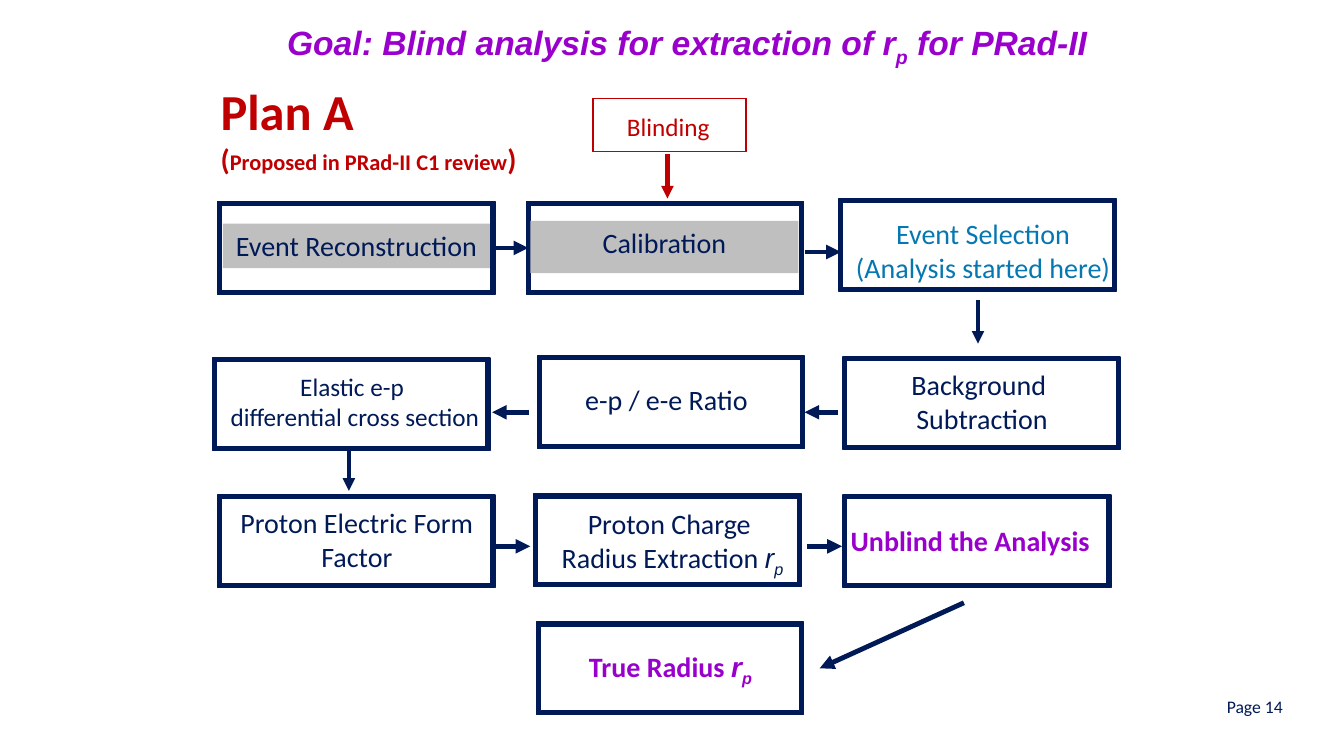
from pptx import Presentation
from pptx.dml.color import RGBColor
from pptx.enum.shapes import MSO_CONNECTOR as Connector, MSO_SHAPE as Shape
from pptx.enum.text import MSO_ANCHOR as Anchor, MSO_AUTO_SIZE as AutoSize, PP_ALIGN as Align
from pptx.oxml.ns import qn
from pptx.util import Inches, Pt
from lxml.etree import SubElement

NAVY = RGBColor(0x00, 0x1A, 0x57)
RED = RGBColor(0xC0, 0x00, 0x00)
PURPLE = RGBColor(0x99, 0x00, 0xCC)
BLUE = RGBColor(0x05, 0x77, 0xB1)
GREY = RGBColor(0xBF, 0xBF, 0xBF)

ITALIC, SUBSCRIPT = "italic", "subscript"
RADIUS = [("r", ITALIC), ("p", SUBSCRIPT)]
TITLE = ["Goal: Blind analysis for extraction of r", ("p", SUBSCRIPT), " for PRad-II"]
PLAN = [[("Plan A", 36)], [("(", 21), ("Proposed in PRad-II C1 review", 16), (")", 21)]]

COLUMNS = (2.16, 5.29, 8.36)
ROWS = (2.0, 3.54, 4.91, 6.17)
FRAME_HEIGHT = 0.92

# column, row, nudge, frame width, text area inside the frame, lines, style
STEPS = [
    (0, 0, (0, 0), 2.75, (0.05, 0.22, 2.65, 0.44), [["Event Reconstruction"]], {"fill": GREY}),
    (1, 0, (-0.07, 0), 2.75, (0.04, 0.19, 2.66, 0.52), [["Calibration"]], {"fill": GREY}),
    (2, 0, (-0.04, -0.03), 2.75, (0, 0.13, 2.86, 0.64),
     [["Event Selection"], ["(Analysis started here)"]], {"color": BLUE}),
    (2, 1, (0, 0), 2.75, (-0.05, 0.06, 2.86, 0.77), [["Background "], ["Subtraction"]], {}),
    (1, 1, (0.04, -0.01), 2.65, (-0.09, 0.22, 2.74, 0.44), [["e-p / e-e Ratio"]], {}),
    (0, 1, (-0.05, 0.01), 2.75, (-0.02, 0.08, 2.86, 0.71),
     [["Elastic e-p "], ["differential cross section"]], {"size": 18}),
    (0, 2, (0, 0), 2.75, (-0.05, 0.06, 2.86, 0.77), [["Proton Electric Form Factor"]], {}),
    (1, 2, (0, -0.01), 2.66, (-0.14, 0.08, 3.04, 0.77),
     [["Proton Charge "], ["Radius Extraction ", *RADIUS]], {}),
    (2, 2, (0, 0), 2.66, (-0.18, 0.23, 2.95, 0.44),
     [["Unblind the Analysis "]], {"color": PURPLE, "bold": True}),
    (1, 3, (0.03, 0), 2.65, (0.04, 0.22, 2.58, 0.72),
     [["True Radius ", *RADIUS]], {"color": PURPLE, "bold": True}),
]

ARROWS = [
    ((6.62, 1.53), (6.62, 1.97), RED, 3),
    ((4.88, 2.46), (5.24, 2.46), NAVY, 3.5),
    ((7.98, 2.5), (8.34, 2.5), NAVY, 3.5),
    ((9.7, 2.98), (9.7, 3.41), NAVY, 3),
    ((8.31, 4.09), (7.98, 4.09), NAVY, 3.5),
    ((5.25, 4.09), (4.88, 4.09), NAVY, 3.5),
    ((3.46, 4.43), (3.46, 4.87), NAVY, 3),
    ((4.91, 5.42), (5.26, 5.42), NAVY, 3.5),
    ((8.0, 5.42), (8.35, 5.42), NAVY, 3.5),
    ((9.56, 5.98), (8.13, 6.63), NAVY, 3.5),
]


def inches(*lengths):
    return [Inches(length) for length in lengths]


def write_runs(paragraph, pieces, size, color, bold=False, italic=False, font_name="Calibri"):
    for piece in pieces:
        text, kind = piece if isinstance(piece, tuple) else (piece, None)
        run = paragraph.add_run()
        run.text = text
        font = run.font
        slanted = kind in (ITALIC, SUBSCRIPT)
        font.name = "Arial" if slanted else font_name
        font.size = Pt(kind if isinstance(kind, int) else size)
        font.bold, font.italic = bold, italic or slanted
        font.color.rgb = color
        if kind == SUBSCRIPT:
            font._element.set("baseline", "-25000")


def write_lines(shape, lines, size=20, color=NAVY, bold=False, align=Align.CENTER, wrap=True):
    frame = shape.text_frame
    frame.word_wrap = wrap
    frame.vertical_anchor = Anchor.TOP
    for index, pieces in enumerate(lines):
        paragraph = frame.add_paragraph() if index else frame.paragraphs[0]
        paragraph.alignment = align
        write_runs(paragraph, pieces, size, color, bold)


def add_frame(slide, area, color, thickness):
    shape = slide.shapes.add_shape(Shape.FRAME, *inches(*area))
    shape.adjustments[0] = thickness
    shape.shadow.inherit = False
    shape.fill.solid()
    shape.fill.fore_color.rgb = color
    shape.line.color.rgb = color
    shape.line.width = Pt(1)


def add_text(slide, area, lines, fill=None, **style):
    if fill is None:
        shape = slide.shapes.add_textbox(*inches(*area))
    else:
        shape = slide.shapes.add_shape(Shape.RECTANGLE, *inches(*area))
        shape.shadow.inherit = False
        shape.fill.solid()
        shape.fill.fore_color.rgb = fill
        shape.line.fill.background()
    write_lines(shape, lines, **style)


def add_arrow(slide, start, end, color, width):
    arrow = slide.shapes.add_connector(Connector.STRAIGHT, *inches(*start, *end))
    arrow.line.color.rgb = color
    arrow.line.width = Pt(width)
    SubElement(arrow.line._get_or_add_ln(), qn("a:tailEnd"), type="triangle")
    SubElement(arrow._element.spPr, qn("a:effectLst"))


def main():
    presentation = Presentation()
    presentation.slide_width, presentation.slide_height = inches(13.33, 7.5)
    slide = presentation.slides.add_slide(presentation.slide_layouts[5])

    title = slide.shapes.title
    title.left, title.top, title.width, title.height = inches(2.08, 0.17, 9.47, 0.97)
    title.text_frame.auto_size = AutoSize.NONE
    title.text_frame.vertical_anchor = Anchor.TOP
    heading = title.text_frame.paragraphs[0]
    heading.alignment = Align.CENTER
    write_runs(heading, TITLE, 24, PURPLE, bold=True, italic=True, font_name="Arial")

    add_text(slide, (2.09, 0.75, 3.77, 1.12), PLAN, color=RED, bold=True,
             align=Align.LEFT, wrap=False)
    add_frame(slide, (5.88, 0.98, 1.52, 0.52), RED, 0)
    add_text(slide, (6.12, 1.05, 1.12, 0.45), [["Blinding"]], size=18, color=RED, align=Align.LEFT)

    for column, row, nudge, width, inner, lines, style in STEPS:
        left, top = COLUMNS[column] + nudge[0], ROWS[row] + nudge[1]
        add_frame(slide, (left, top, width, FRAME_HEIGHT), NAVY, 0.042)
        add_text(slide, (left + inner[0], top + inner[1], *inner[2:]), lines, **style)

    for arrow in ARROWS:
        add_arrow(slide, *arrow)

    add_text(slide, (12.05, 6.85, 0.79, 0.34), [["Page 14"]], size=12.6, wrap=False)
    presentation.save("out.pptx")


if __name__ == "__main__":
    main()
